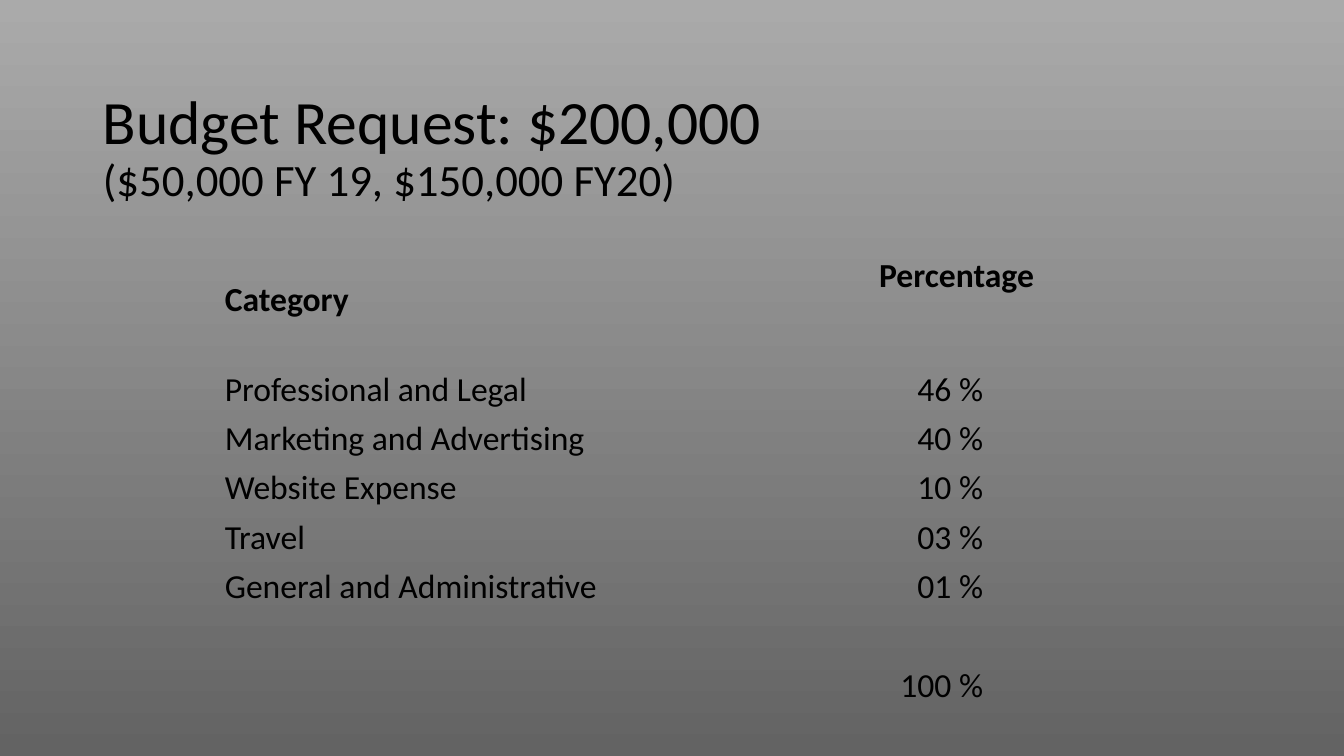
from pptx import Presentation
from pptx import util as u
from pptx.dml.color import RGBColor
from pptx.enum import text
from pptx.oxml.ns import qn

WIDTH, HEIGHT = 13.33, 7.5
FONT, INK = "Calibri", "000000"
PLAIN_STYLE = "{2D5ABB26-0587-4C30-8999-92F81FD0307C}"
COLUMNS = (5.66, 3.8)
ROWS = (1.07, 0.46, 0.49, 0.65, 0.4) + (0.49,) * 7
HEADER_ROW, FIRST_ROW, TOTAL_ROW = 3, 5, 11
HEADER_INDENT, VALUE_INDENT = 0.84, 1.93
BUDGET = (
    ("Professional and Legal", "46 %"),
    ("Marketing and Advertising", "40 %"),
    ("Website Expense", "10 %"),
    ("Travel", "03 %"),
    ("General and Administrative", "01 %"),
)


def colour(value):
    """Return the colour for a hex string."""
    return RGBColor.from_string(value)


def style(font, size, bold=False):
    """Set the slide's typeface and ink at the given size."""
    font.name, font.size, font.bold = FONT, u.Pt(size), bold
    font.color.rgb = colour(INK)


def paint_background(slide, top, bottom):
    """Fill the background with a vertical gradient."""
    fill = slide.background.fill
    fill.gradient()
    fill.gradient_angle = 270
    for stop, value, position in zip(fill.gradient_stops, (top, bottom), (0, 1)):
        stop.color.rgb = colour(value)
        stop.position = position


def write_title(slide, heading, detail):
    """Place the title with a smaller second line."""
    box = slide.shapes.title
    box.left, box.top = u.Inches(0.92), u.Inches(0.75)
    box.width, box.height = u.Inches(11.5), u.Inches(1.45)
    frame = box.text_frame
    frame.word_wrap = True
    frame.auto_size = text.MSO_AUTO_SIZE.NONE
    frame.vertical_anchor = text.MSO_ANCHOR.MIDDLE
    para = frame.paragraphs[0]
    para.alignment, para.line_spacing = text.PP_ALIGN.LEFT, 0.9
    span = para.add_run()
    span.text = heading
    style(span.font, 44)
    para.add_line_break()
    span = para.add_run()
    span.text = detail
    style(span.font, 32)


def add_grid(slide):
    """Add an unstyled table with its top row merged."""
    frame = slide.shapes.add_table(
        len(ROWS), len(COLUMNS), u.Inches(2.22), u.Inches(0.51),
        u.Inches(sum(COLUMNS)), u.Inches(sum(ROWS)))
    table = frame.table
    table.first_row = table.horz_banding = False
    next(frame.element.iter(qn("a:tableStyleId"))).text = PLAIN_STYLE
    for column, width in zip(table.columns, COLUMNS):
        column.width = u.Inches(width)
    for row, height in zip(table.rows, ROWS):
        row.height = u.Inches(height)
    for cell in table.iter_cells():
        cell.fill.background()
        cell.margin_left = cell.margin_right = cell.margin_top = u.Inches(0.01)
        cell.margin_bottom = 0
        cell.vertical_anchor = text.MSO_ANCHOR.BOTTOM
    table.cell(0, 0).merge(table.cell(0, 1))
    return table


def write_cell(cell, words, bold=False):
    """Write one line into a cell."""
    cell.text = words
    style(cell.text_frame.paragraphs[0].font, 24, bold)


def write_value(cell, words):
    """Write a percentage aligned on its right edge."""
    write_cell(cell, words)
    cell.margin_right = u.Inches(VALUE_INDENT)
    cell.text_frame.paragraphs[0].alignment = text.PP_ALIGN.RIGHT


def fill_budget(table):
    """Write the headings, the categories and the total."""
    write_cell(table.cell(HEADER_ROW, 0), "Category", True)
    header = table.cell(HEADER_ROW, 1)
    write_cell(header, "Percentage", True)
    header.margin_left = u.Inches(HEADER_INDENT)
    header.vertical_anchor = text.MSO_ANCHOR.TOP
    for row, (category, share) in enumerate(BUDGET, FIRST_ROW):
        write_cell(table.cell(row, 0), category)
        write_value(table.cell(row, 1), share)
    write_value(table.cell(TOTAL_ROW, 1), "100 %")


def main():
    """Build and save the deck."""
    deck = Presentation()
    deck.slide_width, deck.slide_height = u.Inches(WIDTH), u.Inches(HEIGHT)
    slide = deck.slides.add_slide(deck.slide_layouts.get_by_name("Title Only"))
    paint_background(slide, "AAAAAA", "636363")
    write_title(slide, "Budget Request: $200,000", "($50,000 FY 19, $150,000 FY20)")
    fill_budget(add_grid(slide))
    deck.save("out.pptx")


if __name__ == "__main__":
    main()
